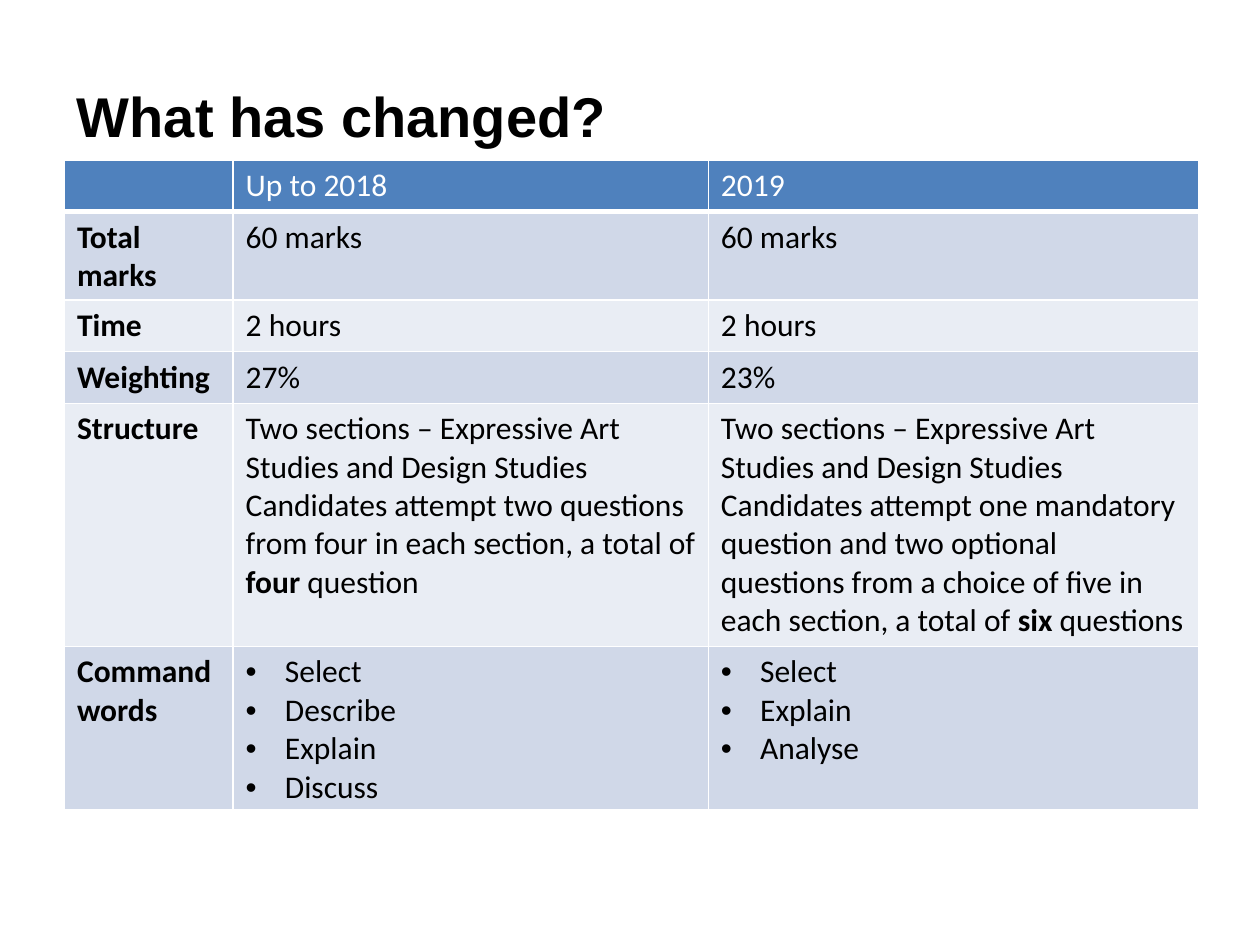
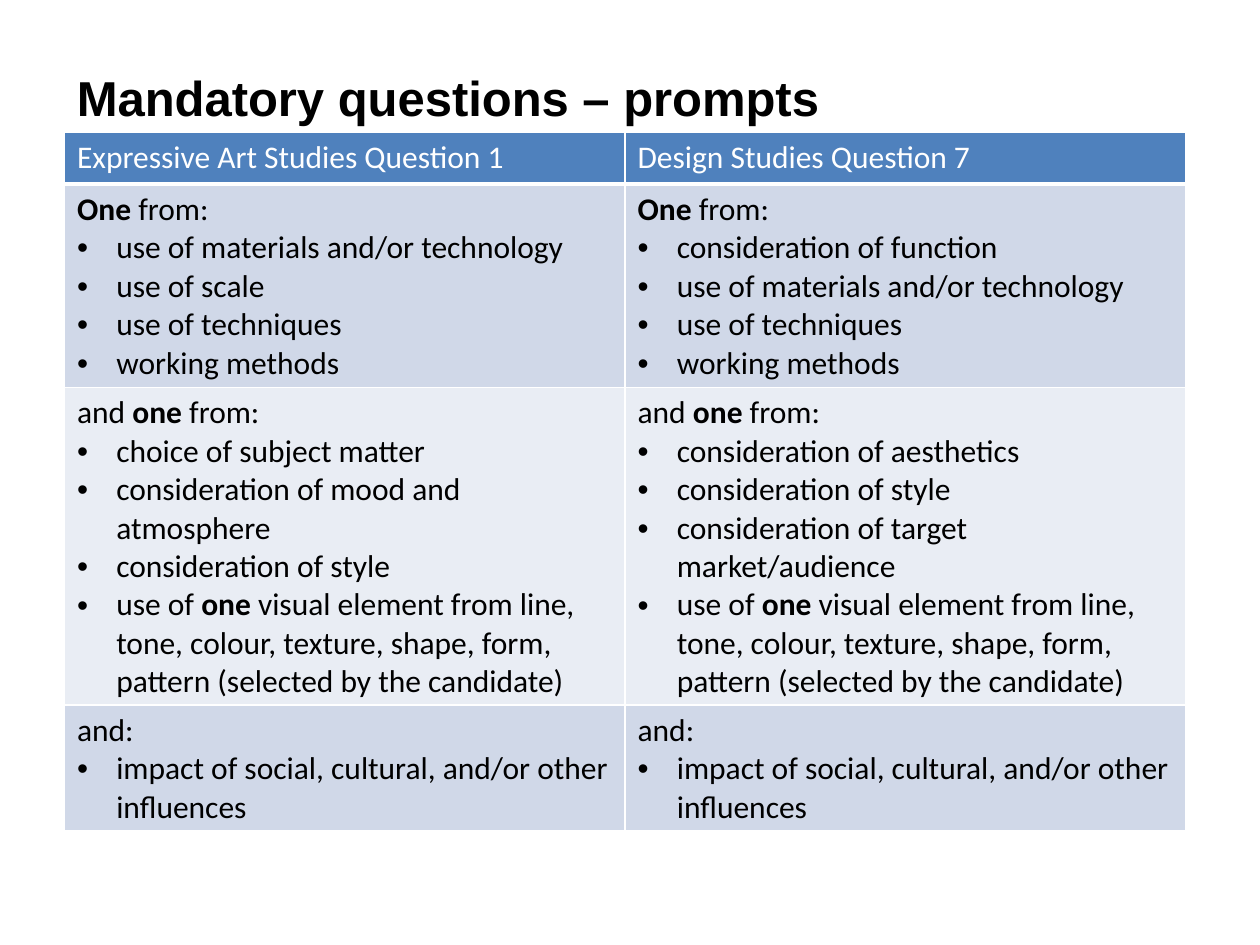
"""Build two slides that compare question papers and list mandatory prompts."""
from dataclasses import dataclass

import pptx
import pptx.dml.color
import pptx.oxml
import pptx.oxml.ns
import pptx.presentation
import pptx.slide
import pptx.table
import pptx.text.text
import pptx.util

Cm = pptx.util.Cm
Pt = pptx.util.Pt
RGBColor = pptx.dml.color.RGBColor

BLACK = RGBColor(0x00, 0x00, 0x00)
WHITE = RGBColor(0xFF, 0xFF, 0xFF)
HEADER_BLUE = RGBColor(0x4F, 0x81, 0xBD)
BAND_COLOURS = (RGBColor(0xD0, 0xD8, 0xE8), RGBColor(0xE9, 0xED, 0xF4))

TITLE_FONT = "Arial"
TABLE_FONT = "Calibri"
TABLE_SIZE = 18
LEFT = Cm(1.3)
TITLE_WIDTH = Cm(22.86)
BULLET_INDENT = Cm(0.79)
BULLET = "• "
BOLD_MARK = "**"

Lines = tuple[str, ...]


@dataclass(frozen=True)
class Title:
    """A slide heading with its place and size."""

    text: str
    top: pptx.util.Length
    height: pptx.util.Length
    size: int


@dataclass(frozen=True)
class Row:
    """One table row: its height and the lines of each cell."""

    height: pptx.util.Length
    cells: tuple[Lines, ...]


@dataclass(frozen=True)
class TableSlide:
    """A titled slide that holds one banded table."""

    title: Title
    table_top: pptx.util.Length
    column_widths: tuple[pptx.util.Length, ...]
    rows: tuple[Row, ...]


def bullets(*items: str) -> Lines:
    """Mark each item as a bulleted line."""
    return tuple(BULLET + item for item in items)


VISUAL_ELEMENT = (
    "use of **one **visual element from line, tone, colour, texture, "
    "shape, form, pattern (selected by the candidate)"
)
FIRST_CHOICE = ("**One **from:",)
SECOND_CHOICE = ("and **one** from:",)
INFLUENCES = ("and:",) + bullets("impact of social, cultural, and/or other influences")
SECTIONS = "Two sections – Expressive Art Studies and Design Studies"

CHANGES = TableSlide(
    Title("What has changed?", Cm(1.52), Cm(1.6), 32),
    Cm(3.23),
    (Cm(3.4), Cm(9.58), Cm(9.88)),
    (
        Row(Cm(1.04), ((), ("Up to 2018",), ("2019",))),
        Row(Cm(1.78), (("**Total marks**",), ("60 marks",), ("60 marks",))),
        Row(Cm(1.04), (("**Time**",), ("2 hours",), ("2 hours",))),
        Row(Cm(1.04), (("**Weighting**",), ("27%",), ("23%",))),
        Row(Cm(4.9), (
            ("**Structure**",),
            (SECTIONS,
             "Candidates attempt two questions from four in each section, "
             "a total of **four** question"),
            (SECTIONS,
             "Candidates attempt one mandatory question and two optional "
             "questions from a choice of five in each section, "
             "a total of **six** questions"),
        )),
        Row(Cm(3.2), (
            ("**Command words**",),
            bullets("Select", "Describe", "Explain", "Discuss"),
            bullets("Select", "Explain", "Analyse"),
        )),
    ),
)

PROMPTS = TableSlide(
    Title("Mandatory questions – prompts", Cm(1.24), Cm(1.4), 28),
    Cm(2.67),
    (Cm(11.3), Cm(11.3)),
    (
        Row(Cm(1.04), (("Expressive Art Studies Question 1",), ("Design Studies Question 7",))),
        Row(Cm(4.1), (
            FIRST_CHOICE + bullets(
                "use of materials and/or technology", "use of scale",
                "use of techniques", "working methods"),
            FIRST_CHOICE + bullets(
                "consideration of function", "use of materials and/or technology",
                "use of techniques", "working methods"),
        )),
        Row(Cm(6.4), (
            SECOND_CHOICE + bullets(
                "choice of subject matter", "consideration of mood and atmosphere",
                "consideration of style", VISUAL_ELEMENT),
            SECOND_CHOICE + bullets(
                "consideration of aesthetics", "consideration of style",
                "consideration of target market/audience", VISUAL_ELEMENT),
        )),
        Row(Cm(2.46), (INFLUENCES, INFLUENCES)),
    ),
)


def add_run(paragraph: pptx.text.text._Paragraph, text: str, font_name: str,
            size: int, colour: RGBColor, bold: bool) -> None:
    """Append one formatted run."""
    run = paragraph.add_run()
    run.text = text
    run.font.name = font_name
    run.font.size = Pt(size)
    run.font.color.rgb = colour
    run.font.bold = bold


def add_bullet(paragraph: pptx.text.text._Paragraph) -> None:
    """Give a paragraph a hanging bullet."""
    properties = paragraph._p.get_or_add_pPr()
    properties.set("marL", str(BULLET_INDENT))
    properties.set("indent", str(-BULLET_INDENT))
    for tag, attribute, value in (("a:buFont", "typeface", TITLE_FONT),
                                  ("a:buChar", "char", BULLET.strip())):
        element = pptx.oxml.parse_xml(f"<{tag} {pptx.oxml.ns.nsdecls('a')}/>")
        element.set(attribute, value)
        properties.append(element)


def write_lines(frame: pptx.text.text.TextFrame, lines: Lines, colour: RGBColor) -> None:
    """Write lines as paragraphs, turning marks into bullets and bold runs."""
    for index, line in enumerate(lines):
        paragraph = frame.add_paragraph() if index else frame.paragraphs[0]
        if line.startswith(BULLET):
            add_bullet(paragraph)
        for part, text in enumerate(line.removeprefix(BULLET).split(BOLD_MARK)):
            if text:
                add_run(paragraph, text, TABLE_FONT, TABLE_SIZE, colour, part % 2 == 1)


def set_borders(cell: pptx.table._Cell, bottom_points: int) -> None:
    """Draw white lines on all four sides of a cell."""
    properties = cell._tc.get_or_add_tcPr()
    for side, points in (("L", 1), ("R", 1), ("T", 1), ("B", bottom_points)):
        properties.append(pptx.oxml.parse_xml(
            f'<a:ln{side} {pptx.oxml.ns.nsdecls("a")} w="{Pt(points)}">'
            f'<a:solidFill><a:srgbClr val="{WHITE}"/></a:solidFill></a:ln{side}>'))


def add_title(slide: pptx.slide.Slide, title: Title) -> None:
    """Add the bold slide heading."""
    shape = slide.shapes.add_textbox(LEFT, title.top, TITLE_WIDTH, title.height)
    shape.text_frame.word_wrap = True
    add_run(shape.text_frame.paragraphs[0], title.text, TITLE_FONT, title.size, BLACK, True)


def add_banded_table(slide: pptx.slide.Slide, content: TableSlide) -> None:
    """Add the table with a blue header and alternating bands."""
    table = slide.shapes.add_table(
        len(content.rows), len(content.column_widths), LEFT, content.table_top,
        Cm(sum(width.cm for width in content.column_widths)),
        Cm(sum(row.height.cm for row in content.rows))).table
    table.first_row = False
    table.horz_banding = False
    for column, width in zip(table.columns, content.column_widths):
        column.width = width
    for row_index, row in enumerate(content.rows):
        is_header = row_index == 0
        table.rows[row_index].height = row.height
        for column_index, lines in enumerate(row.cells):
            cell = table.cell(row_index, column_index)
            set_borders(cell, 3 if is_header else 1)
            cell.fill.solid()
            cell.fill.fore_color.rgb = (
                HEADER_BLUE if is_header else BAND_COLOURS[(row_index - 1) % 2])
            write_lines(cell.text_frame, lines, WHITE if is_header else BLACK)


def main() -> None:
    """Build and save the presentation."""
    presentation = pptx.Presentation()
    presentation.slide_width = Cm(25.4)
    presentation.slide_height = Cm(19.05)
    for content in (CHANGES, PROMPTS):
        slide = presentation.slides.add_slide(presentation.slide_layouts[6])
        add_title(slide, content.title)
        add_banded_table(slide, content)
    presentation.save("out.pptx")


if __name__ == "__main__":
    main()
